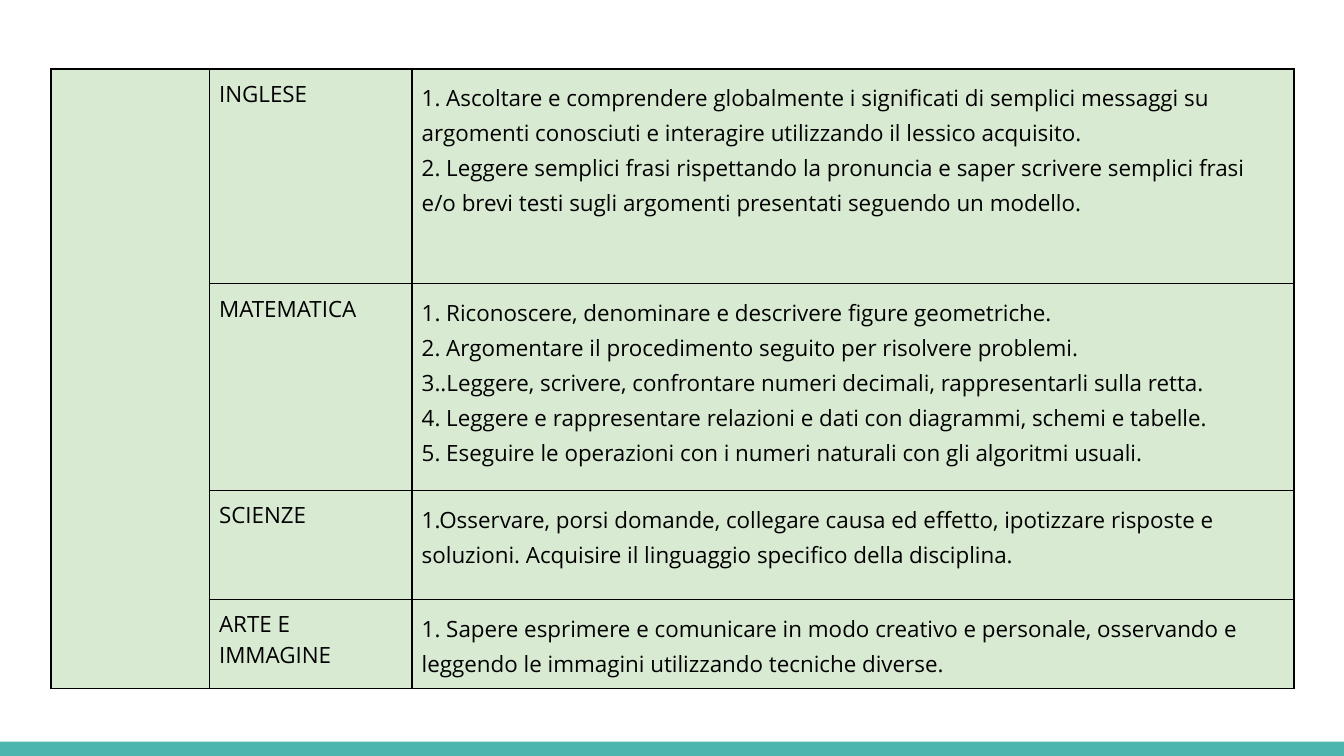
from lxml.etree import SubElement
from pptx import Presentation
from pptx.dml.color import RGBColor
from pptx.enum.shapes import MSO_SHAPE
from pptx.oxml.ns import qn
from pptx.util import Cm, Pt

COLORS = {"bar": "4DB6AC", "cell": "D9EAD3", "ink": "000000"}
FONT = "Open Sans"
COL_WIDTHS = [3, 3.83, 16.66]
ROW_HEIGHTS = [4.06, 3.91, 2.06, 1.63]
SUBJECTS = [
    ("INGLESE", [
        "1. Ascoltare e comprendere globalmente i significati di semplici messaggi su argomenti conosciuti e interagire utilizzando il lessico acquisito.",
        "2. Leggere semplici frasi rispettando la pronuncia e saper scrivere semplici frasi e/o brevi testi sugli argomenti presentati seguendo un modello.",
    ]),
    ("MATEMATICA", [
        "1. Riconoscere, denominare e descrivere figure geometriche.",
        "2. Argomentare il procedimento seguito per risolvere problemi.",
        "3..Leggere, scrivere, confrontare numeri decimali, rappresentarli sulla retta.",
        "4. Leggere e rappresentare relazioni e dati con diagrammi, schemi e tabelle.",
        "5. Eseguire le operazioni con i numeri naturali con gli algoritmi usuali.",
    ]),
    ("SCIENZE", [
        "1.Osservare, porsi domande, collegare causa ed effetto, ipotizzare risposte e soluzioni. Acquisire il linguaggio specifico della disciplina.",
    ]),
    ("ARTE E IMMAGINE", [
        "1. Sapere esprimere e comunicare in modo creativo e personale, osservando e leggendo le immagini utilizzando tecniche diverse.",
    ]),
]


def style_cell(cell):
    cell.margin_left = cell.margin_right = Cm(0.18)
    cell.margin_top = cell.margin_bottom = Cm(0.18)
    tcPr = cell._tc.get_or_add_tcPr()
    for side in ("a:lnL", "a:lnR", "a:lnT", "a:lnB"):
        ln = SubElement(tcPr, qn(side), w=str(Pt(1)))
        fill = SubElement(ln, qn("a:solidFill"))
        SubElement(fill, qn("a:srgbClr"), val=COLORS["ink"])
    cell.fill.solid()
    cell.fill.fore_color.rgb = RGBColor.from_string(COLORS["cell"])


def write_cell(cell, lines, spacing):
    tf = cell.text_frame
    tf.text = "\n".join(lines)
    for p in tf.paragraphs:
        p.line_spacing = spacing
        p.font.name = FONT
        p.font.size = Pt(12)
        p.font.color.rgb = RGBColor.from_string(COLORS["ink"])


prs = Presentation()
prs.slide_width = Cm(25.4)
prs.slide_height = Cm(14.29)
s = prs.slides.add_slide(prs.slide_layouts[6])

bar = s.shapes.add_shape(MSO_SHAPE.RECTANGLE, 0, Cm(14.02), prs.slide_width, Cm(0.27))
bar.shadow.inherit = False
bar.fill.solid()
bar.fill.fore_color.rgb = RGBColor.from_string(COLORS["bar"])
bar.line.fill.background()

table = s.shapes.add_table(
    len(ROW_HEIGHTS), len(COL_WIDTHS), Cm(0.96), Cm(1.3),
    Cm(sum(COL_WIDTHS)), Cm(sum(ROW_HEIGHTS))).table
table.first_row = table.horz_banding = False
for column, width in zip(table.columns, COL_WIDTHS):
    column.width = Cm(width)
for row, height in zip(table.rows, ROW_HEIGHTS):
    row.height = Cm(height)
for cell in table.iter_cells():
    style_cell(cell)
table.cell(0, 0).merge(table.cell(len(SUBJECTS) - 1, 0))

for i, (subject, goals) in enumerate(SUBJECTS):
    write_cell(table.cell(i, 1), [subject], 1.0)
    write_cell(table.cell(i, 2), goals, 1.15)

prs.save("out.pptx")
